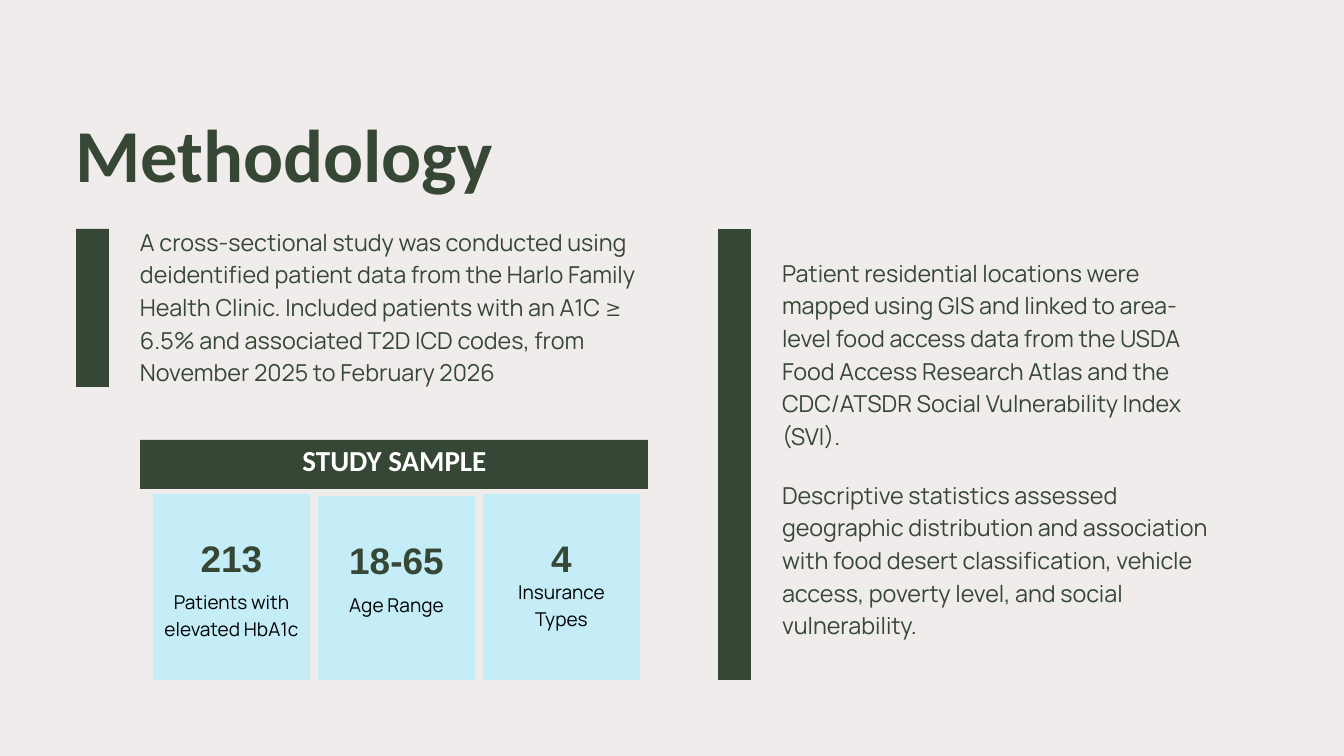
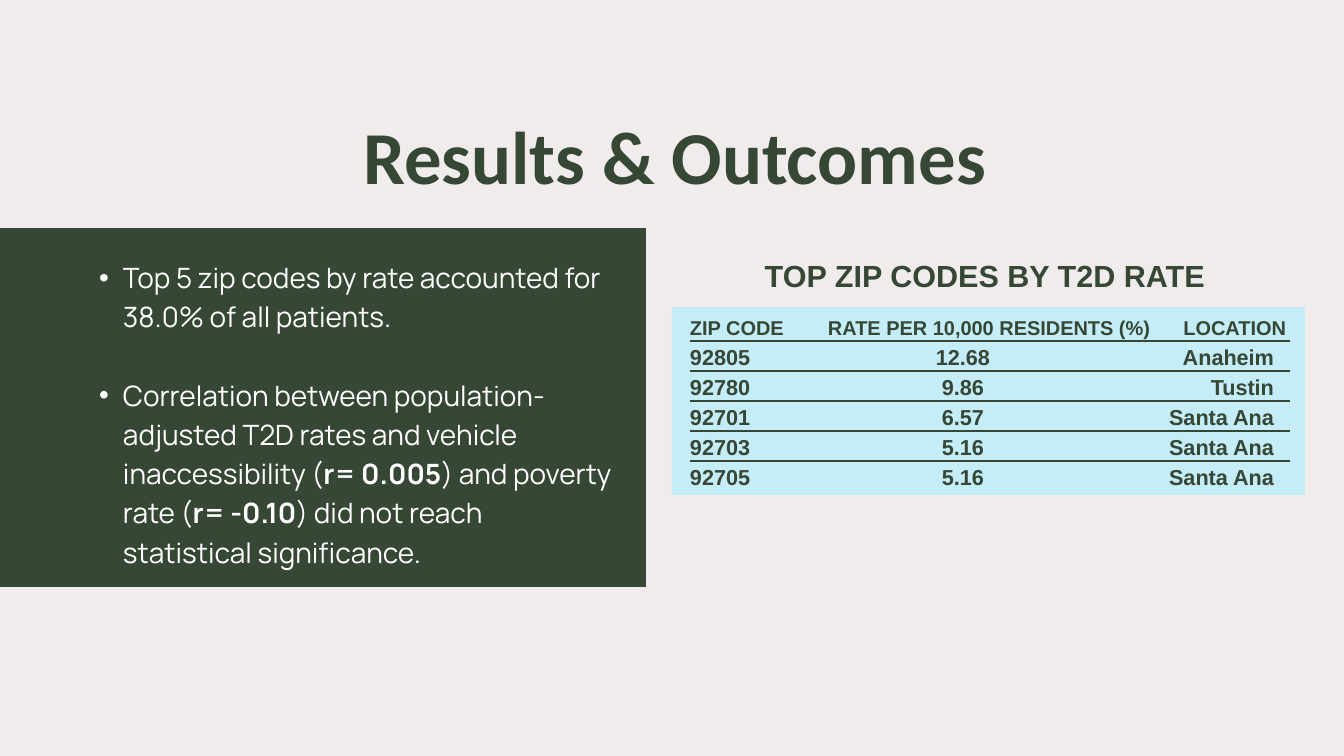
"""Builds the methodology and results slides of the diabetes and food access study."""
from lxml.etree import SubElement
from pptx import Presentation
from pptx.dml.color import RGBColor
from pptx.enum.shapes import MSO_CONNECTOR, MSO_SHAPE
from pptx.enum.text import MSO_ANCHOR, MSO_AUTO_SIZE, PP_ALIGN
from pptx.oxml.ns import qn
from pptx.util import Emu, Pt

GREEN, BLUE, CREAM = "364735", "C4EDF8", "F1ECEC"
WHITE, BLACK = "FFFFFF", "000000"
LEFT, CENTER, RIGHT = PP_ALIGN.LEFT, PP_ALIGN.CENTER, PP_ALIGN.RIGHT
NO_STYLE = "{2D5ABB26-0587-4C30-8999-92F81FD0307C}"
SLIDE_SIZE = (1344, 756)

METHODS = [
    ("A cross-sectional study was conducted using deidentified patient data from the "
     "Harlo Family Health Clinic. Included patients with an A1C ≥ 6.5% and associated "
     "T2D ICD codes, from November 2025 to February 2026", (140, 223, 533, 161)),
    ("Patient residential locations were mapped using GIS and linked to area-level food "
     "access data from the USDA Food Access Research Atlas and the CDC/ATSDR Social "
     "Vulnerability Index (SVI).", (782, 254, 441, 226)),
    ("Descriptive statistics assessed geographic distribution and association with food "
     "desert classification, vehicle access, poverty level, and social vulnerability.",
     (782, 476, 441, 161)),
]
METHOD_BARS = [(76, 229, 33, 158), (718, 229, 33, 451)]

SAMPLE_CARDS = [
    ("213", ["Patients with elevated HbA1c"], 494, 587),
    ("18-65", ["Age Range"], 496, 590),
    ("4", ["Insurance", "Types"], 494, 577),
]
CARD_LEFT, CARD_STEP, CARD_WIDTH, CARD_BOTTOM = 153, 165, 157, 680

FINDINGS = [
    "Top 5 zip codes by rate accounted for 38.0% of all patients.",
    "Correlation between population-adjusted T2D rates and vehicle inaccessibility "
    "(**r= 0.005**) and poverty rate (**r= -0.10**) did not reach statistical significance.",
]
RATES = [
    ("ZIP CODE", "RATE PER 10,000 RESIDENTS (%)", "LOCATION"),
    ("92805", "12.68", "Anaheim"),
    ("92780", "9.86", "Tustin"),
    ("92701", "6.57", "Santa Ana"),
    ("92703", "5.16", "Santa Ana"),
    ("92705", "5.16", "Santa Ana"),
]
COLUMN_WIDTHS = (98, 366, 136)
TABLE_LEFT, TABLE_TOP, ROW_HEIGHT = 690, 311, 30


def px(length):
    return Emu(round(length * 914400 / 67.2))


def color(value):
    return RGBColor.from_string(value)


def place(shape, box):
    shape.left, shape.top, shape.width, shape.height = map(px, box)


def write(frame, paragraphs, size=25, font="Manrope", fill=GREEN, bold=False,
          align=LEFT, leading=None, gap=0, hanging=0):
    """Fills a text frame; words between double asterisks turn bold."""
    for index, text in enumerate(paragraphs):
        paragraph = frame.add_paragraph() if index else frame.paragraphs[0]
        paragraph.alignment = align
        paragraph.space_before = Pt(gap if index else 0)
        if leading:
            paragraph.line_spacing = Pt(leading)
        if hanging:
            properties = paragraph._p.get_or_add_pPr()
            properties.set("marL", str(px(2 * hanging)))
            properties.set("indent", str(px(-hanging)))
        for part, words in enumerate(text.split("**")):
            run = paragraph.add_run()
            run.text = words
            run.font.name, run.font.size = font, Pt(size)
            run.font.bold = bold or part % 2 == 1
            run.font.color.rgb = color(fill)


def add_text(shape, box, paragraphs, **style):
    place(shape, box)
    frame = shape.text_frame
    frame.word_wrap = True
    frame.auto_size = MSO_AUTO_SIZE.NONE
    frame.vertical_anchor = MSO_ANCHOR.TOP
    frame.margin_left = frame.margin_top = frame.margin_right = frame.margin_bottom = 0
    write(frame, paragraphs, **style)


def add_label(slide, box, paragraphs, **style):
    add_text(slide.shapes.add_textbox(0, 0, 0, 0), box, paragraphs, **style)


def add_block(slide, box, fill):
    block = slide.shapes.add_shape(MSO_SHAPE.RECTANGLE, *map(px, box))
    block.shadow.inherit = False
    block.fill.solid()
    block.fill.fore_color.rgb = color(fill)
    block.line.fill.background()
    return block


def add_slide(presentation, layout, title, box, align=LEFT):
    slide = presentation.slides.add_slide(presentation.slide_layouts[layout])
    add_text(slide.shapes.title, box, [title], size=80, font="Calibri", bold=True,
             align=align, leading=112)
    return slide


def add_rule(slide, left, right, top):
    rule = slide.shapes.add_connector(MSO_CONNECTOR.STRAIGHT, px(right), px(top),
                                      px(left), px(top))
    rule.line.color.rgb = color(GREEN)
    rule.line.width = Pt(1.5)
    SubElement(rule.element.spPr, qn("a:effectLst"))


def add_rate_table(slide):
    width = sum(COLUMN_WIDTHS)
    frame = slide.shapes.add_table(len(RATES), len(COLUMN_WIDTHS), px(TABLE_LEFT),
                                   px(TABLE_TOP), px(width), px(ROW_HEIGHT * len(RATES)))
    table = frame.table
    table.first_row = table.horz_banding = False
    for style in frame.element.iter(qn("a:tableStyleId")):
        style.text = NO_STYLE
    for column, column_width in zip(table.columns, COLUMN_WIDTHS):
        column.width = px(column_width)
    for row, values in enumerate(RATES):
        table.rows[row].height = px(ROW_HEIGHT)
        header = row == 0
        aligns = (LEFT, RIGHT, RIGHT) if header else (LEFT, CENTER, RIGHT)
        for column, (value, align) in enumerate(zip(values, aligns)):
            cell = table.cell(row, column)
            cell.margin_left = cell.margin_top = 0
            cell.margin_bottom = px(1)
            cell.margin_right = 0 if column == 0 else px(4 if header else 16)
            cell.vertical_anchor = MSO_ANCHOR.BOTTOM
            cell.fill.solid()
            cell.fill.fore_color.rgb = color(BLUE)
            write(cell.text_frame, [value], size=21.4 if header else 23.2,
                  font="Arial", bold=True, align=align)
    for row in range(1, len(RATES)):
        add_rule(slide, TABLE_LEFT, TABLE_LEFT + width, TABLE_TOP + row * ROW_HEIGHT)


def build_methodology(presentation):
    slide = add_slide(presentation, 5, "Methodology", (75, 93, 564, 110))
    for bar in METHOD_BARS:
        add_block(slide, bar, GREEN)
    for text, box in METHODS:
        add_label(slide, box, [text], leading=35)
    for index, (number, label, top, label_top) in enumerate(SAMPLE_CARDS):
        left = CARD_LEFT + index * CARD_STEP
        add_block(slide, (left, top, CARD_WIDTH, CARD_BOTTOM - top), BLUE)
        add_label(slide, (left + 4, top + 34, CARD_WIDTH - 8, 52), [number], size=39.6,
                  font="Arial", bold=True, align=CENTER, leading=55.5)
        add_label(slide, (left + 9, label_top, CARD_WIDTH - 18, 54), label, size=20.4,
                  fill=BLACK, align=CENTER, leading=28.5)
    add_block(slide, (140, 440, 508, 49), GREEN)
    add_label(slide, (188, 437, 413, 43), ["STUDY SAMPLE"], size=31.1, font="Calibri",
              fill=WHITE, bold=True, align=CENTER, leading=43.6)


def build_results(presentation):
    slide = add_slide(presentation, 1, "Results & Outcomes", (323, 95, 704, 110), CENTER)
    findings = slide.placeholders[1]
    panel = add_block(slide, (0, 228, 646, 359), GREEN)
    findings.element.addprevious(panel.element)
    add_text(findings, (75, 255, 540, 308), FINDINGS, size=30, fill=WHITE,
             leading=42, gap=42, hanging=24)
    add_label(slide, (685, 251, 600, 46), ["TOP ZIP CODES BY T2D RATE"], size=32.7,
              font="Arial", bold=True, align=CENTER, leading=45.8)
    add_block(slide, (672, 307, 633, 188), BLUE)
    add_rate_table(slide)


def main():
    presentation = Presentation()
    presentation.slide_width, presentation.slide_height = map(px, SLIDE_SIZE)
    background = presentation.slide_master.background.fill
    background.solid()
    background.fore_color.rgb = color(CREAM)
    build_methodology(presentation)
    build_results(presentation)
    presentation.save("out.pptx")


if __name__ == "__main__":
    main()
